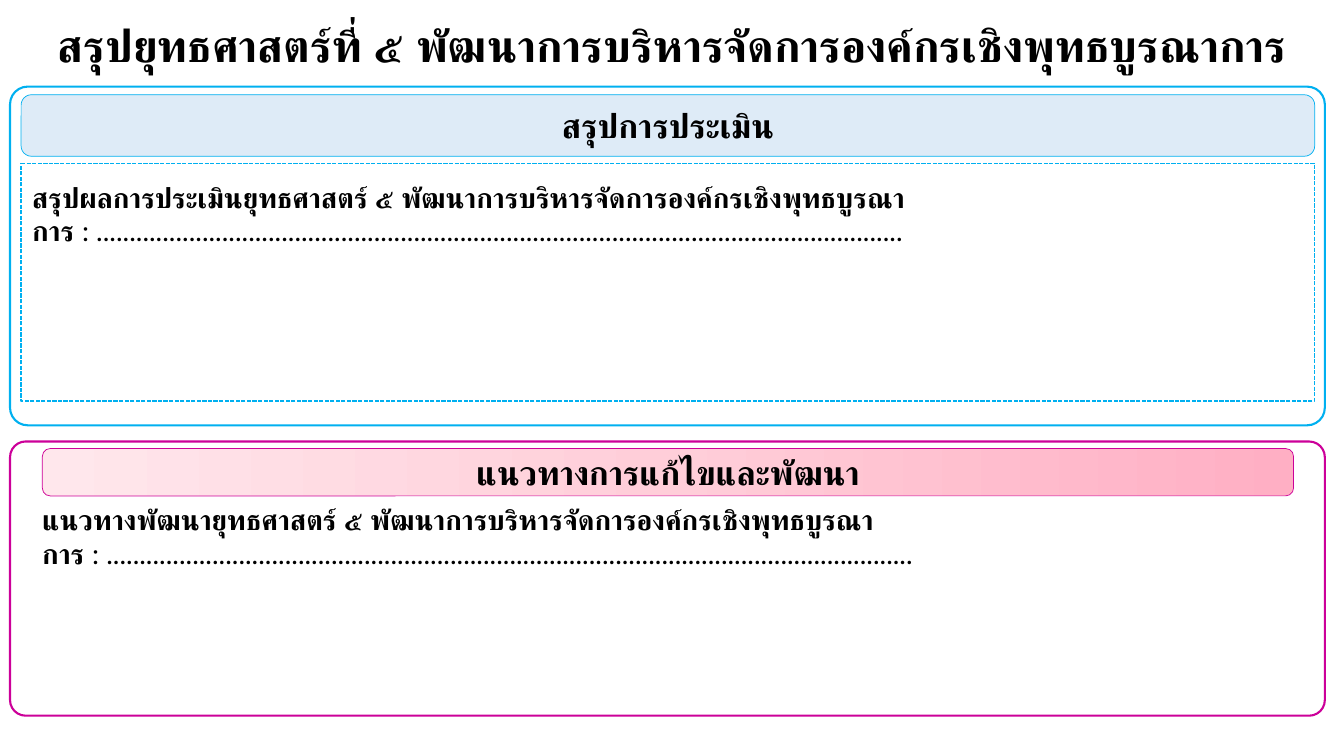
"""Build the summary slide for strategy five: assessment and development panels."""
import copy
from dataclasses import dataclass
from typing import Any, Optional

import pptx
import pptx.dml.color
import pptx.enum.dml
import pptx.enum.shapes
import pptx.enum.text
import pptx.util
from lxml import etree
from pptx.oxml.ns import qn

Inches = pptx.util.Inches
Pt = pptx.util.Pt
RGBColor = pptx.dml.color.RGBColor
Align = pptx.enum.text.PP_ALIGN
Anchor = pptx.enum.text.MSO_ANCHOR

FONT = "Lato"
BLACK = RGBColor(0x00, 0x00, 0x00)
SKY = RGBColor(0x00, 0xB0, 0xF0)
PALE_BLUE = RGBColor(0xDE, 0xEB, 0xF7)
MAGENTA = RGBColor(0xCC, 0x00, 0x99)
PINKS = (
    RGBColor(0xFF, 0xAF, 0xC4),
    RGBColor(0xFF, 0xCE, 0xD9),
    RGBColor(0xFF, 0xE7, 0xEC),
)
TITLE = "สรุปยุทธศาสตร์ที่ ๕ พัฒนาการบริหารจัดการองค์กรเชิงพุทธบูรณาการ"
TOPIC = "ยุทธศาสตร์ ๕ พัฒนาการบริหารจัดการองค์กรเชิงพุทธบูรณาการ "
DOTS = ": " + "." * 122


@dataclass(frozen=True)
class Area:
    left: float
    top: float
    width: float
    height: float

    def lengths(self) -> tuple[int, ...]:
        return tuple(Inches(n) for n in (self.left, self.top, self.width, self.height))


@dataclass(frozen=True)
class Panel:
    frame: Area
    rounding: float
    color: RGBColor
    fills: tuple[RGBColor, ...]
    heading: str
    heading_area: Area
    lead: str
    lead_area: Area
    dashed_area: Optional[Area] = None


PANELS = (
    Panel(Area(0.1, 0.86, 13.04, 3.36), 0.052, SKY, (PALE_BLUE,),
          "สรุปการประเมิน", Area(0.21, 0.94, 12.83, 0.61),
          "สรุปผลการประเมิน", Area(0.22, 1.74, 12.61, 0.77),
          Area(0.21, 1.62, 12.83, 2.36)),
    Panel(Area(0.1, 4.38, 13.04, 2.72), 0.057, MAGENTA, PINKS,
          "แนวทางการแก้ไขและพัฒนา", Area(0.42, 4.45, 12.41, 0.47),
          "แนวทางพัฒนา", Area(0.32, 4.94, 12.61, 0.77)),
)


def style_font(font: Any, size: float, bold: Optional[bool] = None) -> None:
    font.name = FONT
    font.size = Pt(size)
    font.bold = bold
    font.color.rgb = BLACK


def set_insets(frame: Any, side: float, end: float) -> None:
    frame.margin_left = frame.margin_right = Inches(side)
    frame.margin_top = frame.margin_bottom = Inches(end)


def paint(shape: Any, colors: tuple[RGBColor, ...]) -> None:
    if not colors:
        shape.fill.background()
    elif len(colors) == 1:
        shape.fill.solid()
        shape.fill.fore_color.rgb = colors[0]
    else:
        shape.fill.gradient()
        shape.fill.gradient_angle = 180
        stops = shape.fill._fill._gradFill.find(qn("a:gsLst"))
        pattern = copy.deepcopy(stops[0])
        for stop in list(stops):
            stops.remove(stop)
        for index, color in enumerate(colors):
            stop = copy.deepcopy(pattern)
            stop.set("pos", str(100000 * index // (len(colors) - 1)))
            for child in list(stop):
                stop.remove(child)
            etree.SubElement(stop, qn("a:srgbClr")).set("val", str(color))
            stops.append(stop)


def add_box(page: Any, area: Area, rounding: float, line: RGBColor, weight: float,
            fills: tuple[RGBColor, ...] = ()) -> Any:
    kind = pptx.enum.shapes.MSO_SHAPE.ROUNDED_RECTANGLE
    box = page.shapes.add_shape(kind, *area.lengths())
    box.adjustments[0] = rounding
    box.shadow.inherit = False
    box.line.color.rgb = line
    box.line.width = Pt(weight)
    paint(box, fills)
    return box


def add_title(page: Any) -> None:
    title = page.shapes.title
    title.left, title.top, title.width, title.height = Area(0, 0.13, 13.33, 0.64).lengths()
    frame = title.text_frame
    frame.text = TITLE
    frame.word_wrap = True
    frame.vertical_anchor = Anchor.TOP
    set_insets(frame, 0.02, 0.05)
    para = frame.paragraphs[0]
    para.alignment = Align.CENTER
    style_font(para.font, 32, True)


def add_heading(page: Any, panel: Panel) -> None:
    box = add_box(page, panel.heading_area, 0.167, panel.color, 0.5, panel.fills)
    frame = box.text_frame
    frame.text = panel.heading
    frame.word_wrap = True
    frame.vertical_anchor = Anchor.MIDDLE
    set_insets(frame, 0.04, 0.01)
    para = frame.paragraphs[0]
    para.alignment = Align.CENTER
    style_font(para.font, 24, True)


def add_lead(page: Any, panel: Panel) -> None:
    frame = page.shapes.add_textbox(*panel.lead_area.lengths()).text_frame
    frame.word_wrap = True
    para = frame.paragraphs[0]
    style_font(para.font, 20)
    for text, bold in ((panel.lead + TOPIC, True), (DOTS, False)):
        span = para.add_run()
        span.text = text
        span.font.bold = bold


def add_panel(page: Any, panel: Panel) -> None:
    add_box(page, panel.frame, panel.rounding, panel.color, 1.5)
    add_heading(page, panel)
    if panel.dashed_area:
        dashed = add_box(page, panel.dashed_area, 0, panel.color, 1)
        dashed.line.dash_style = pptx.enum.dml.MSO_LINE.SQUARE_DOT
    add_lead(page, panel)


def main() -> None:
    deck = pptx.Presentation()
    deck.slide_width = Inches(13.33)
    deck.slide_height = Inches(7.5)
    page = deck.slides.add_slide(deck.slide_layouts[5])
    add_title(page)
    for panel in PANELS:
        add_panel(page, panel)
    deck.save("out.pptx")


if __name__ == "__main__":
    main()
